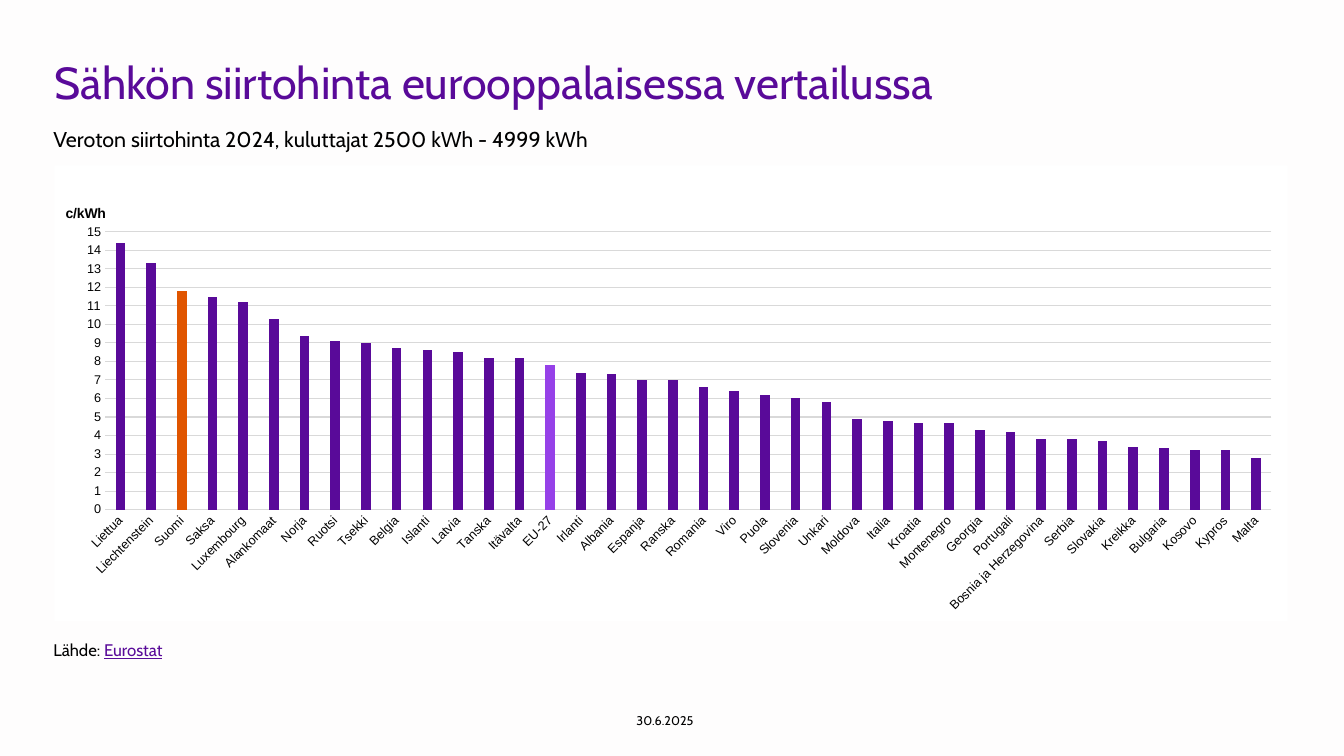
from lxml import etree
from pptx import Presentation
from pptx.chart.data import CategoryChartData
from pptx.dml.color import RGBColor
from pptx.enum.chart import XL_CHART_TYPE, XL_TICK_MARK
from pptx.enum.text import MSO_ANCHOR, MSO_AUTO_SIZE, PP_ALIGN
from pptx.oxml import parse_xml
from pptx.oxml.ns import nsdecls, qn
from pptx.util import Inches, Pt

COLUMN = XL_CHART_TYPE.COLUMN_CLUSTERED
NO_TICK = XL_TICK_MARK.NONE
TOP, MIDDLE = MSO_ANCHOR.TOP, MSO_ANCHOR.MIDDLE
LEFT, CENTER = PP_ALIGN.LEFT, PP_ALIGN.CENTER
NO_AUTOFIT = MSO_AUTO_SIZE.NONE

PURPLE = RGBColor(0x59, 0x0A, 0x99)
ORANGE = RGBColor(0xE0, 0x55, 0x00)
LILAC = RGBColor(0x96, 0x41, 0xE8)
GRID = RGBColor(0xD9, 0xD9, 0xD9)
BLACK = RGBColor(0, 0, 0)
WHITE = RGBColor(0xFF, 0xFF, 0xFF)
PAPER = RGBColor(0xFE, 0xFD, 0xFD)

TITLE = "Sähkön siirtohinta eurooppalaisessa vertailussa"
SUBTITLE = "Veroton siirtohinta 2024, kuluttajat 2500 kWh - 4999 kWh"
SOURCE_LABEL, SOURCE_NAME = "Lähde: ", "Eurostat"
DATE = "30.6.2025"
UNIT = "c/kWh"
PRICES = {
    "Liettua": 14.4, "Liechtenstein": 13.3, "Suomi": 11.8, "Saksa": 11.5,
    "Luxembourg": 11.2, "Alankomaat": 10.3, "Norja": 9.4, "Ruotsi": 9.1,
    "Tsekki": 9, "Belgia": 8.7, "Islanti": 8.6, "Latvia": 8.5,
    "Tanska": 8.2, "Itävalta": 8.2, "EU-27": 7.8, "Irlanti": 7.4,
    "Albania": 7.3, "Espanja": 7, "Ranska": 7, "Romania": 6.6,
    "Viro": 6.4, "Puola": 6.2, "Slovenia": 6, "Unkari": 5.8,
    "Moldova": 4.9, "Italia": 4.8, "Kroatia": 4.7, "Montenegro": 4.7,
    "Georgia": 4.3, "Portugali": 4.2, "Bosnia ja Herzegovina": 3.8,
    "Serbia": 3.8, "Slovakia": 3.7, "Kreikka": 3.4, "Bulgaria": 3.3,
    "Kosovo": 3.2, "Kypros": 3.2, "Malta": 2.8,
}
HIGHLIGHTS = {"Suomi": ORANGE, "EU-27": LILAC}


def style_font(font, name, size, color, bold=False):
    font.name = name
    font.size = Pt(size)
    font.bold = bold
    font.color.rgb = color


def write(box, spans, size, spacing=1.0, align=LEFT, anchor=TOP, right=0.1):
    frame = box.text_frame
    frame.word_wrap = True
    frame.auto_size = NO_AUTOFIT
    frame.vertical_anchor = anchor
    frame.margin_left, frame.margin_right = 0, Inches(right)
    frame.margin_top = frame.margin_bottom = Inches(0.05)
    para = frame.paragraphs[0]
    para.alignment = align
    para.line_spacing = spacing
    for text, color, underline in spans:
        span = para.add_run()
        span.text = text
        style_font(span.font, "Cabin", size, color)
        span.font.underline = underline


def add_box(page, left, top, width, height):
    return page.shapes.add_textbox(
        Inches(left), Inches(top), Inches(width), Inches(height))


def place(parent, index, **values):
    for old in parent.findall(qn("c:layout")):
        parent.remove(old)
    layout = parse_xml(f"<c:layout {nsdecls('c')}><c:manualLayout/></c:layout>")
    for tag, value in values.items():
        etree.SubElement(layout[0], qn(f"c:{tag}")).set("val", str(value))
    parent.insert(index, layout)


def add_price_chart(page):
    data = CategoryChartData()
    data.categories = list(PRICES)
    data.add_series(UNIT, list(PRICES.values()))
    chart = page.shapes.add_chart(
        COLUMN, Inches(0.54), Inches(1.64), Inches(12.23), Inches(4.52), data).chart
    chart.has_legend = False
    chart.has_title = False
    style_font(chart.font, "Arial", 10, BLACK)

    plot = chart.plots[0]
    plot.gap_width = 219
    plot.overlap = -27
    plot.vary_by_categories = False
    series = plot.series[0]
    series.format.fill.solid()
    series.format.fill.fore_color.rgb = PURPLE
    for index, country in enumerate(PRICES):
        if country in HIGHLIGHTS:
            fill = series.points[index].format.fill
            fill.solid()
            fill.fore_color.rgb = HIGHLIGHTS[country]

    countries, prices = chart.category_axis, chart.value_axis
    for axis in (countries, prices):
        axis.major_tick_mark = axis.minor_tick_mark = NO_TICK
        style_font(axis.tick_labels.font, "Arial", 9, BLACK)
    for line in (countries.format.line, prices.major_gridlines.format.line):
        line.color.rgb = GRID
        line.width = Pt(0.75)
    prices.format.line.fill.background()
    prices.minimum_scale, prices.maximum_scale = 0, 15
    prices.major_unit = 1
    labels = countries._element.find(qn("c:txPr")).find(qn("a:bodyPr"))
    labels.set("rot", "-2700000")
    labels.set("vert", "horz")

    frame = prices.axis_title.text_frame
    span = frame.paragraphs[0].add_run()
    span.text = UNIT
    style_font(span.font, "Arial", 10, BLACK, True)
    frame._txBody.bodyPr.set("rot", "0")
    frame._txBody.bodyPr.set("vert", "horz")
    place(prices.axis_title._element, 1, xMode="edge", yMode="edge", x=0.007, y=0.08)

    space = chart._chartSpace
    place(space.chart.plotArea, 0, layoutTarget="inner", xMode="edge", yMode="edge",
          x=0.041, y=0.146, w=0.946, h=0.61)
    space.chart.addnext(parse_xml(
        f"<c:spPr {nsdecls('c', 'a')}><a:solidFill><a:srgbClr val='{WHITE}'/>"
        "</a:solidFill><a:ln><a:noFill/></a:ln></c:spPr>"))


def main():
    deck = Presentation()
    deck.slide_width, deck.slide_height = Inches(13.33), Inches(7.5)
    page = deck.slides.add_slide(deck.slide_layouts[5])
    page.background.fill.solid()
    page.background.fill.fore_color.rgb = PAPER

    title = page.shapes.title
    title.left, title.top = Inches(0.54), Inches(0.55)
    title.width, title.height = Inches(12.23), Inches(1.09)
    write(title, [(TITLE, PURPLE, False)], 32, 0.9)
    write(add_box(page, 0.53, 1.27, 12.24, 0.3), [(SUBTITLE, BLACK, False)], 15.3, 0.7)
    add_price_chart(page)
    source = [(SOURCE_LABEL, BLACK, False), (SOURCE_NAME, PURPLE, True)]
    write(add_box(page, 0.53, 6.32, 12.24, 0.23), source, 12, 0.9)
    write(add_box(page, 6.04, 6.95, 1.11, 0.4), [(DATE, BLACK, False)], 9,
          align=CENTER, anchor=MIDDLE, right=0)
    deck.save("out.pptx")


if __name__ == "__main__":
    main()
